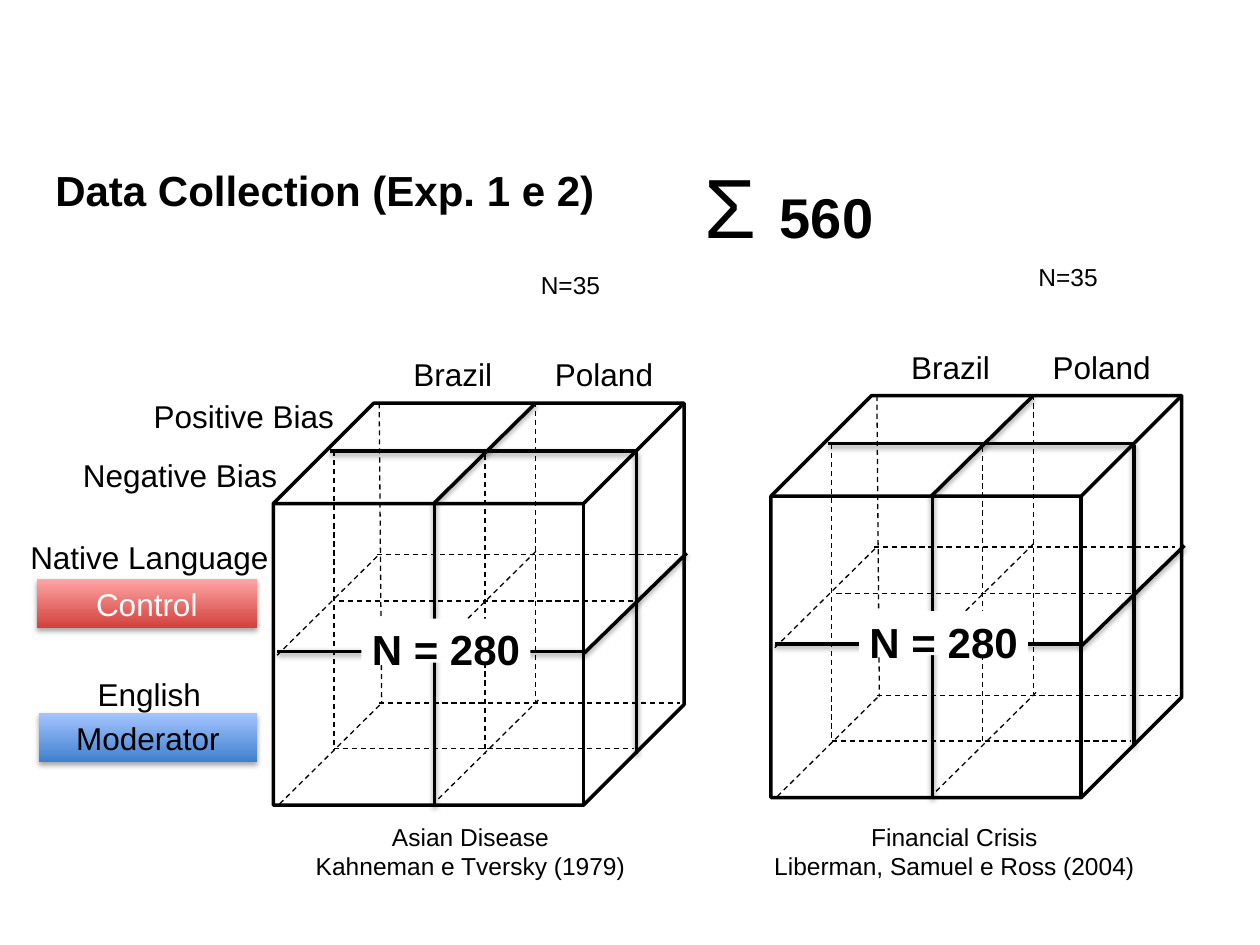
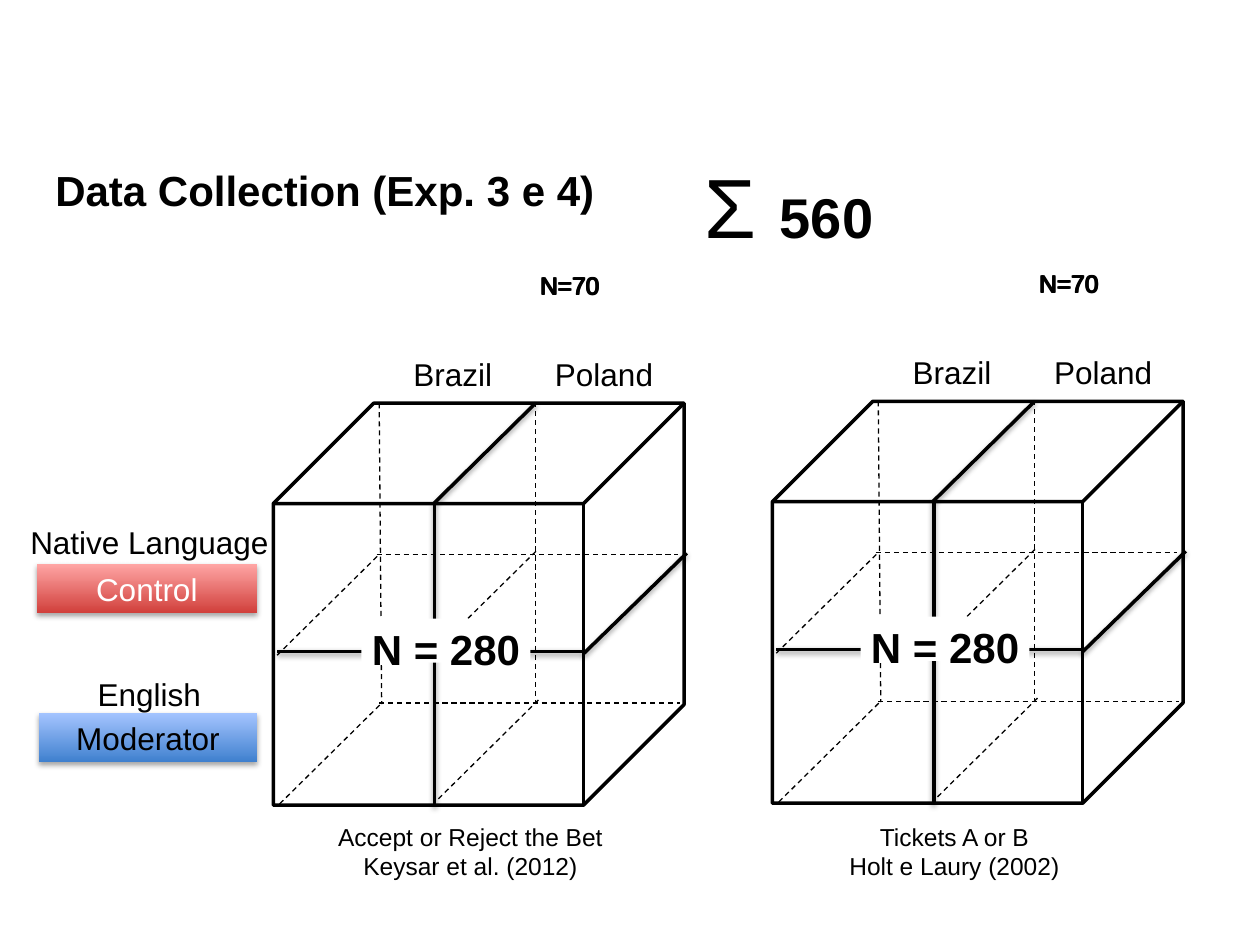
from itertools import product

from lxml import etree
from pptx import Presentation
from pptx.dml.color import RGBColor
from pptx.enum import dml, shapes, text
from pptx.oxml.ns import qn
from pptx.util import Pt

BLACK = RGBColor(0x00, 0x00, 0x00)
WHITE = RGBColor(0xFF, 0xFF, 0xFF)
RED_DARK = RGBColor(0xD1, 0x40, 0x3C)
RED_LIGHT = RGBColor(0xFF, 0xA6, 0xA5)
BLUE_DARK = RGBColor(0x3F, 0x80, 0xCE)
BLUE_LIGHT = RGBColor(0xA4, 0xC4, 0xFF)

FONT = "Arial"
WIDE_INSETS = (7.2, 3.6)
TIGHT_INSETS = (3, 3)
CUBE_SIZE = (234.7, 229.7)

BACK_EDGE = (60.5, 0, 61.9, 172)
FRONT_DIVIDERS = [
    (2.2, 141.8, 177.1, 141.8),
    (92.2, 57.6, 92.2, 229.7),
    (91.4, 57.6, 149.8, 0),
    (177.1, 143.3, 236.2, 85.7),
]
BIAS_DIVIDERS = [
    (32.4, 27.4, 207.4, 27.4),
    (207.4, 28.1, 207.4, 200.2),
]
HIDDEN_EDGES = [
    (2.2, 144, 60.5, 86.4),
    (92.9, 141.1, 151.2, 83.5),
    (59, 86.4, 231.1, 86.4),
    (3.6, 229, 61.9, 171.4),
    (94.3, 226.1, 152.6, 168.5),
    (60.5, 171.4, 232.6, 171.4),
    (149.8, -0.7, 149.8, 170.6),
]
HIDDEN_BIAS_EDGES = [
    (37.4, 113, 208.8, 113),
    (34.6, 27.4, 34.6, 198),
    (121, 29.5, 121, 200.2),
    (34.6, 197.3, 205.9, 197.3),
]


class Deck:
    """Holds the presentation, its style and the current slide."""

    def __init__(self):
        self.presentation = Presentation()
        self.presentation.slide_width = Pt(720)
        self.presentation.slide_height = Pt(540)
        self.slide = None

    def new_slide(self):
        layout = self.presentation.slide_layouts[6]
        self.slide = self.presentation.slides.add_slide(layout)

    def cast_shadow(self, shape, alpha, distance):
        properties = shape._element.spPr
        effects = properties.find(qn("a:effectLst"))
        if effects is None:
            effects = etree.SubElement(properties, qn("a:effectLst"))
        if alpha:
            shadow = etree.SubElement(
                effects, qn("a:outerShdw"), blurRad=str(Pt(3.1)),
                dist=str(Pt(distance)), dir="5400000", rotWithShape="0")
            color = etree.SubElement(shadow, qn("a:srgbClr"), val=str(BLACK))
            etree.SubElement(color, qn("a:alpha"), val=str(alpha * 1000))

    def fill_text(self, shape, lines, size, color=BLACK, bold=False, centred=True,
                  insets=WIDE_INSETS, anchor=text.MSO_ANCHOR.TOP):
        frame = shape.text_frame
        frame.word_wrap = True
        frame.vertical_anchor = anchor
        frame.margin_left = frame.margin_right = Pt(insets[0])
        frame.margin_top = frame.margin_bottom = Pt(insets[1])
        frame.text = "\n".join(lines)
        for paragraph in frame.paragraphs:
            paragraph.alignment = text.PP_ALIGN.CENTER if centred else text.PP_ALIGN.LEFT
            paragraph.font.name = FONT
            paragraph.font.size = Pt(size)
            paragraph.font.bold = bold
            paragraph.font.color.rgb = color
        return frame

    def label(self, box, *lines, size=18, **style):
        shape = self.slide.shapes.add_textbox(*map(Pt, box))
        return self.fill_text(shape, lines, size, **style)

    def preset(self, kind, box):
        shape = self.slide.shapes.add_shape(kind, *map(Pt, box))
        shape.shadow.inherit = False
        return shape

    def line(self, ends, origin, dashed=False):
        left, top = origin
        x1, y1, x2, y2 = ends
        connector = self.slide.shapes.add_connector(
            shapes.MSO_CONNECTOR.STRAIGHT,
            Pt(left + x1), Pt(top + y1), Pt(left + x2), Pt(top + y2))
        connector.line.color.rgb = BLACK
        connector.line.width = Pt(0.75 if dashed else 2)
        if dashed:
            connector.line.dash_style = dml.MSO_LINE.DASH
        self.cast_shadow(connector, 0 if dashed else 38, 1.6)

    def language_button(self, box, caption, dark, light, color):
        button = self.preset(shapes.MSO_SHAPE.RECTANGLE, box)
        button.fill.gradient()
        button.fill.gradient_angle = 90
        for stop, shade in zip(button.fill.gradient_stops, (dark, light)):
            stop.color.rgb = shade
        button.line.fill.background()
        self.cast_shadow(button, 35, 1.8)
        self.fill_text(button, [caption], 18, color, anchor=text.MSO_ANCHOR.MIDDLE)

    def cube(self, origin, cell_count, with_bias):
        left, top = origin
        self.line(BACK_EDGE, origin, dashed=True)
        cube = self.preset(shapes.MSO_SHAPE.CUBE, (left, top, *CUBE_SIZE))
        cube.fill.background()
        cube.line.color.rgb = BLACK
        cube.line.width = Pt(2)
        for ends in FRONT_DIVIDERS + (BIAS_DIVIDERS if with_bias else []):
            self.line(ends, origin)
        for ends in HIDDEN_EDGES + (HIDDEN_BIAS_EDGES if with_bias else []):
            self.line(ends, origin, dashed=True)

        self.label((left + 145.4, top - 31, 87.1, 26.6), "Poland")
        self.label((left + 69.8, top - 31, 65.5, 28.8), "Brazil")
        shifts = [(0, 0)] if with_bias else product((0, -0.72), (0, 0.72))
        for dx, dy in shifts:
            self.label((left + 149.8 + dx, top - 79.2 + dy, 41.8, 18.7),
                       cell_count, size=14, centred=False, insets=TIGHT_INSETS)

        total = self.preset(shapes.MSO_SHAPE.RECTANGLE,
                            (left + 50.4, top + 123.1, 96.5, 25.2))
        total.fill.solid()
        total.fill.fore_color.rgb = WHITE
        total.line.fill.background()
        self.fill_text(total, ["N = 280"], 24, bold=True, insets=TIGHT_INSETS)

    def design_slide(self, title, cell_count, origins, studies, native_top, with_bias):
        self.new_slide()
        for (left, width), study in zip(((156.2, 225.4), (414, 262.8)), studies):
            self.label((left, 466.6, width, 23.8), *study, size=14, insets=TIGHT_INSETS)
        for origin in origins:
            self.cube(origin, cell_count, with_bias)

        self.label((-4.3, native_top, 179.3, 18.7), "Native Language")
        self.language_button((20.9, native_top + 27, 126, 28.1), "Control",
                             RED_DARK, RED_LIGHT, WHITE)
        self.label((0, 382.3, 170.6, 18.7), "English")
        self.language_button((22.3, 407.5, 124.6, 28.1), "Moderator",
                             BLUE_DARK, BLUE_LIGHT, BLACK)
        if with_bias:
            self.label((61.9, 223.2, 154.8, 18.7), "Positive Bias")
            self.label((18.7, 257, 168.5, 18.7), "Negative Bias")

        grand_total = self.label((399.6, 85, 120.2, 30.2), "Σ ", size=48,
                                 centred=False, insets=TIGHT_INSETS)
        number = grand_total.paragraphs[0].add_run()
        number.text = "560"
        number.font.size = Pt(32)
        number.font.bold = True
        heading = self.label((24.5, 90.7, 389.5, 36), title, size=24,
                             bold=True, centred=False)
        heading.auto_size = text.MSO_AUTO_SIZE.SHAPE_TO_FIT_TEXT


def main():
    deck = Deck()
    deck.design_slide(
        "Data Collection (Exp. 1 e 2)", "N=35",
        [(156.2, 230.4), (440.6, 226.1)],
        [("Asian Disease", "Kahneman e Tversky (1979)"),
         ("Financial Crisis", "Liberman, Samuel e Ross (2004)")],
        native_top=303.8, with_bias=True)
    deck.design_slide(
        "Data Collection (Exp. 3 e 4)", "N=70",
        [(156.2, 230.4), (441.4, 229.3)],
        [("Accept or Reject the Bet", "Keysar et al. (2012)"),
         ("Tickets A or B", "Holt e Laury (2002)")],
        native_top=295.2, with_bias=False)
    deck.presentation.save("out.pptx")


if __name__ == "__main__":
    main()
